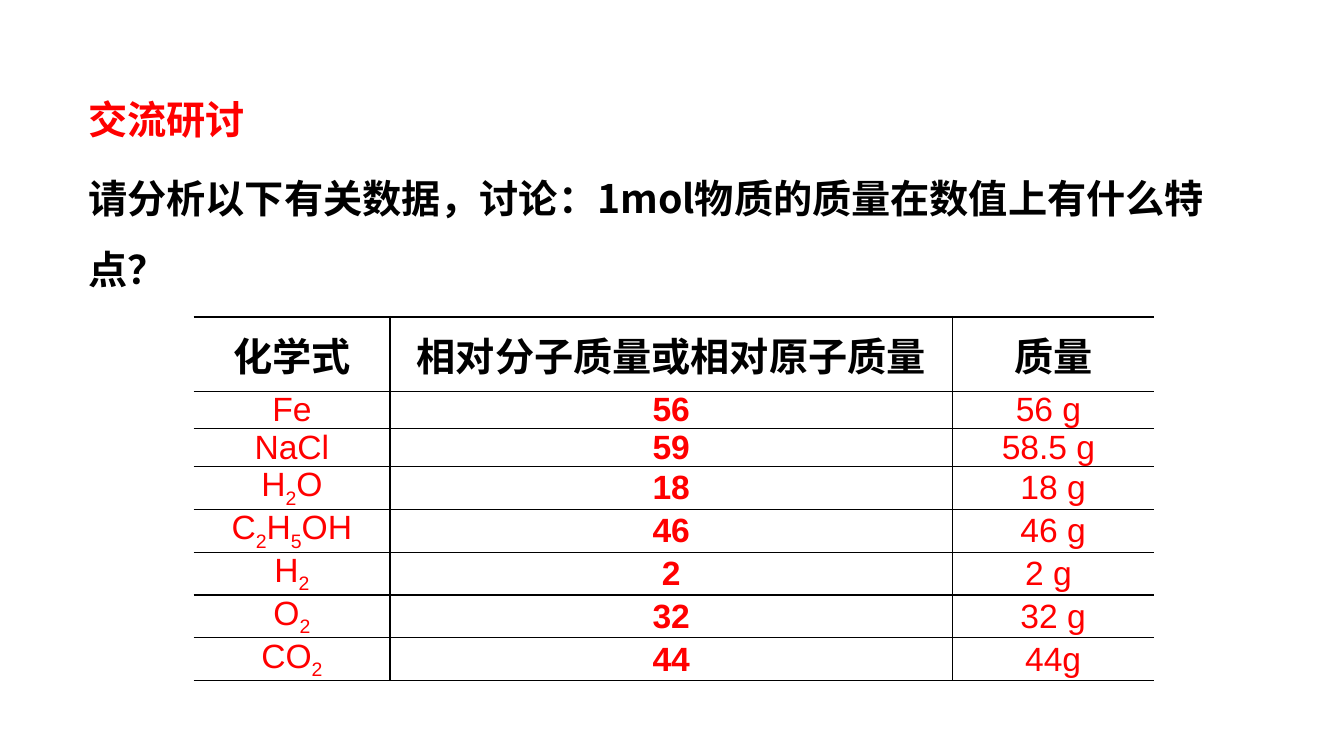
from itertools import groupby

from lxml import etree
from pptx import Presentation
from pptx.dml.color import RGBColor
from pptx.enum import text
from pptx.oxml import ns
from pptx.util import Cm, Pt

HEADING = "交流研讨"
QUESTION = "请分析以下有关数据，讨论：1mol物质的质量在数值上有什么特点？"
COLUMNS = ("化学式", "相对分子质量或相对原子质量", "质量")
SUBSTANCES = [
    ("Fe", "56", "56 g "),
    ("NaCl", "59", "58.5 g "),
    ("H2O", "18", "18 g"),
    ("C2H5OH", "46", "46 g"),
    ("H2", "2", "2 g "),
    ("O2", "32", "32 g"),
    ("CO2", "44", "44g"),
]
THEME = {
    "ink": RGBColor(0, 0, 0), "accent": RGBColor(255, 0, 0),
    "latin": "Arial", "chinese": "Noto Sans CJK SC",
    "large": 28, "body": 24, "rule": 1, "top_rule": 1.5,
}
COLUMN_WIDTHS = (Cm(4.95), Cm(14.17), Cm(5.08))
HEADER_HEIGHT, PLAIN_HEIGHT, SUBSCRIPT_HEIGHT = Cm(1.88), Cm(0.79), Cm(0.89)


def add_run(paragraph, words, size, color, bold, latin, subscript=False):
    run = paragraph.add_run()
    run.text = words
    font = run.font
    font.size, font.bold, font.name = Pt(size), bold, latin
    font.color.rgb = color
    east_asian = etree.SubElement(run._r.rPr, ns.qn("a:ea"))
    east_asian.set("typeface", THEME["chinese"])
    if subscript:
        run._r.rPr.set("baseline", "-25000")


def set_borders(cell, widths):
    """Draw the left, right, top and bottom rules; a width of 0 means none."""
    properties = cell._tc.get_or_add_tcPr()
    for place, (side, width) in enumerate(zip("LRTB", widths)):
        rule = etree.Element(ns.qn(f"a:ln{side}"), w=str(Pt(width)))
        if width:
            fill = etree.SubElement(rule, ns.qn("a:solidFill"))
            etree.SubElement(fill, ns.qn("a:srgbClr"), val=str(THEME["ink"]))
        else:
            etree.SubElement(rule, ns.qn("a:noFill"))
        properties.insert(place, rule)


def fill_cell(cell, words, row, column):
    cell.margin_left = cell.margin_right = cell.margin_top = cell.margin_bottom = 0
    cell.vertical_anchor = text.MSO_ANCHOR.MIDDLE
    cell.fill.background()
    rule = THEME["rule"]
    set_borders(cell, (rule if column > 0 else 0,
                       rule if column < len(COLUMNS) - 1 else 0,
                       rule if row else THEME["top_rule"], rule))
    paragraph = cell.text_frame.paragraphs[0]
    paragraph.alignment = text.PP_ALIGN.CENTER
    size, color = ((THEME["body"], THEME["accent"]) if row
                   else (THEME["large"], THEME["ink"]))
    bold = row == 0 or column == 1
    if column == 0:
        parts = [("".join(group), digits) for digits, group in groupby(words, str.isdigit)]
    else:
        parts = [(words, False)]
    for part, subscript in parts:
        add_run(paragraph, part, size, color, bold, THEME["latin"], subscript)


def add_question(slide):
    frame = slide.shapes.add_textbox(Cm(1.98), Cm(1.68), Cm(29.13), Cm(5.61)).text_frame
    frame.word_wrap = True
    heading, question = frame.paragraphs[0], frame.add_paragraph()
    question.space_before = Pt(6.4)
    for paragraph, words, color in ((heading, HEADING, THEME["accent"]),
                                    (question, QUESTION, THEME["ink"])):
        paragraph.line_spacing = 1.5
        add_run(paragraph, words, THEME["large"], color, True, THEME["chinese"])


def add_mass_table(slide):
    heights = [HEADER_HEIGHT] + [
        SUBSCRIPT_HEIGHT if any(map(str.isdigit, formula)) else PLAIN_HEIGHT
        for formula, *_ in SUBSTANCES]
    masses = slide.shapes.add_table(len(heights), len(COLUMNS), Cm(4.88), Cm(7.98),
                                    sum(COLUMN_WIDTHS), sum(heights)).table
    masses.first_row = masses.horz_banding = False
    for column, width in zip(masses.columns, COLUMN_WIDTHS):
        column.width = width
    for row, height in zip(masses.rows, heights):
        row.height = height
    for r, entries in enumerate([COLUMNS] + SUBSTANCES):
        for c, words in enumerate(entries):
            fill_cell(masses.cell(r, c), words, r, c)


def main():
    deck = Presentation()
    deck.slide_width, deck.slide_height = Cm(33.87), Cm(19.05)
    slide = deck.slides.add_slide(deck.slide_layouts[6])
    add_mass_table(slide)
    add_question(slide)
    deck.save("out.pptx")


if __name__ == "__main__":
    main()
